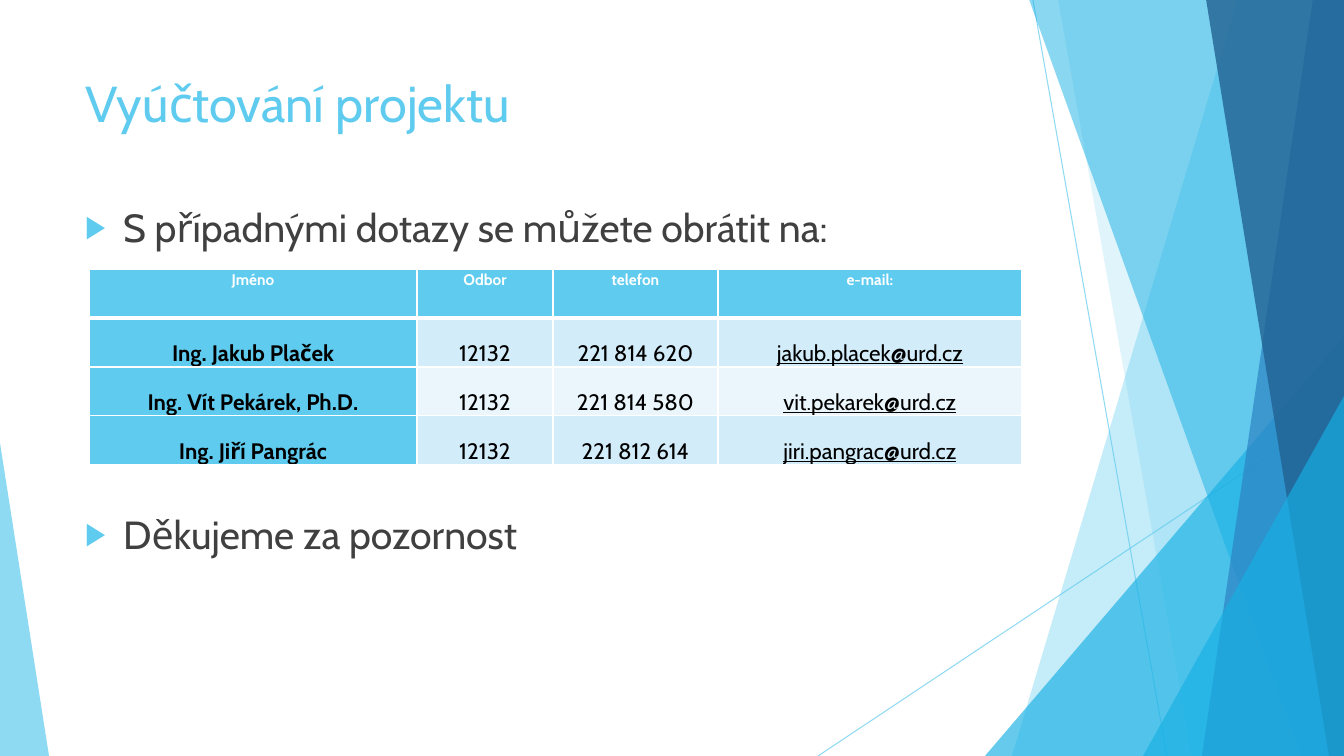
from lxml import etree
from pptx import Presentation
from pptx.dml.color import RGBColor
from pptx.enum.shapes import MSO_CONNECTOR, MSO_SHAPE
from pptx.enum.text import MSO_ANCHOR, MSO_AUTO_SIZE, PP_ALIGN
from pptx.oxml.ns import qn
from pptx.util import Pt

STRAIGHT, TRIANGLE = MSO_CONNECTOR.STRAIGHT, MSO_SHAPE.ISOSCELES_TRIANGLE
TOP, BOTTOM = MSO_ANCHOR.TOP, MSO_ANCHOR.BOTTOM
LEFT, CENTER = PP_ALIGN.LEFT, PP_ALIGN.CENTER
NO_AUTOFIT = MSO_AUTO_SIZE.NONE

WIDTH, HEIGHT = 1344, 756
EMU_PER_PX = 12192000 / WIDTH
SKY, CYAN, BLUE, NAVY = "5FCBEF", "17B0E4", "2E83C3", "226292"
WHITE, BLACK, GRAY = "FFFFFF", "000000", "404040"
BANDS = ["D2ECF9", "EAF6FC"]


def px(length):
    return round(length * EMU_PER_PX)


def color(hex_value):
    return RGBColor.from_string(hex_value)


def apply(target, values):
    for name, value in values.items():
        setattr(target, name, value)


def add_xml(parent, tag, **attributes):
    return etree.SubElement(parent, qn(tag), attributes)


def set_alpha(owner, percent):
    for rgb in owner.iter(qn("a:srgbClr")):
        add_xml(rgb, "a:alpha", val=str(percent * 1000))


class Deck:
    font_name = "Cabin"

    def __init__(self):
        self.presentation = Presentation()
        apply(self.presentation, {"slide_width": px(WIDTH), "slide_height": px(HEIGHT)})
        layout = self.presentation.slide_layouts[1]
        self.slide = self.presentation.slides.add_slide(layout)
        self.shapes = self.slide.shapes

    def ray(self, x1, y1, x2, y2):
        line = self.shapes.add_connector(STRAIGHT, px(x1), px(y1), px(x2), px(y2))
        line.line.width = Pt(0.75)
        line.line.color.rgb = color(SKY)
        properties = line.element.spPr
        set_alpha(properties, 70)
        add_xml(properties, "a:effectLst")

    def paint(self, facet, fill, alpha):
        facet.shadow.inherit = False
        facet.fill.solid()
        facet.fill.fore_color.rgb = color(fill)
        facet.line.fill.background()
        set_alpha(facet.element.spPr, alpha)

    def strip(self, top_x, bottom_x, fill, alpha):
        """Facet that reaches from a slanted left edge to the slide's right edge."""
        outline = self.shapes.build_freeform(top_x, -1, scale=EMU_PER_PX)
        outline.add_line_segments([(WIDTH, -1), (WIDTH, HEIGHT), (bottom_x, HEIGHT)])
        self.paint(outline.convert_to_shape(), fill, alpha)

    def corner(self, left, top, width, peak, fill, alpha):
        """Triangle that stands on the slide's bottom edge."""
        facet = self.shapes.add_shape(
            TRIANGLE, px(left), px(top), px(width), px(HEIGHT - top))
        facet.adjustments[0] = peak
        self.paint(facet, fill, alpha)

    def add_text(self, paragraph, text, size, fill, align=CENTER, **font):
        paragraph.alignment = align
        run = paragraph.add_run()
        run.text = text
        run.font.color.rgb = color(fill)
        apply(run.font, {"name": self.font_name, "size": Pt(size), **font})

    def place(self, placeholder, left, top, width, height):
        apply(placeholder, {"left": px(left), "top": px(top),
                            "width": px(width), "height": px(height)})
        frame = placeholder.text_frame
        apply(frame, {"vertical_anchor": TOP, "word_wrap": True, "auto_size": NO_AUTOFIT})
        # Bring the text in front of the facets
        placeholder.element.getparent().append(placeholder.element)
        return frame

    def title(self, text, *box):
        frame = self.place(self.shapes.title, *box)
        self.add_text(frame.paragraphs[0], text, 36, SKY, LEFT)

    def bullets(self, items, *box):
        frame = self.place(self.slide.placeholders[1], *box)
        for index, (text, space_before) in enumerate(items):
            paragraph = frame.add_paragraph() if index else frame.paragraphs[0]
            paragraph.space_before = Pt(space_before)
            self.add_text(paragraph, text, 28, GRAY, LEFT)
            properties = paragraph._p.get_or_add_pPr()
            properties.set("marL", str(px(38)))
            properties.set("indent", str(px(-38)))
            add_xml(add_xml(properties, "a:buClr"), "a:srgbClr", val=SKY)
            add_xml(properties, "a:buSzPct", val="80000")
            add_xml(properties, "a:buChar", char="▶")

    def cell(self, cell, text, fill, anchor, borders, text_style):
        apply(cell, {"margin_left": px(7), "margin_right": px(7), "margin_top": 0,
                     "margin_bottom": 0, "vertical_anchor": anchor})
        properties = cell._tc.get_or_add_tcPr()
        for side, width in borders.items():
            line = add_xml(properties, "a:ln" + side, w=str(Pt(width)))
            add_xml(add_xml(line, "a:solidFill"), "a:srgbClr", val=WHITE)
        cell.fill.solid()
        cell.fill.fore_color.rgb = color(fill)
        paragraph = cell.text_frame.paragraphs[0]
        paragraph.line_spacing = 1.07
        self.add_text(paragraph, text, **text_style)

    def contacts(self, rows, left, top, widths, row_height):
        table = self.shapes.add_table(
            len(rows), len(widths), px(left), px(top),
            px(sum(widths)), px(row_height * len(rows))).table
        apply(table, {"first_row": False, "horz_banding": False})
        for column, width in zip(table.columns, widths):
            column.width = px(width)
        for r, row in enumerate(rows):
            table.rows[r].height = px(row_height)
            header = r == 0
            borders = {"L": 1, "R": 1, "T": 3 if r == 1 else 1, "B": 3 if header else 1}
            for c, text in enumerate(row):
                text_style = {"size": 11 if header else 16,
                              "fill": WHITE if header else BLACK,
                              "bold": header or c == 0, "underline": "@" in text}
                self.cell(
                    table.cell(r, c), text,
                    SKY if header or c == 0 else BANDS[(r - 1) % 2],
                    TOP if header else BOTTOM, borders, text_style)


def main():
    deck = Deck()

    # Facets of the background, back to front
    deck.ray(1033, 0, 1167, HEIGHT)
    deck.ray(WIDTH, 406, 818, HEIGHT)
    deck.strip(1238, 1012, SKY, 36)
    deck.strip(1058, 1192, SKY, 20)
    deck.corner(985, 336, 359, 1, CYAN, 66)
    deck.strip(1029, 1301, CYAN, 50)
    deck.strip(1313, 1202, BLUE, 70)
    deck.strip(1206, 1329, NAVY, 80)
    deck.corner(1143, 396, 201, 1, CYAN, 66)
    deck.corner(0, 443, 49, 0, SKY, 70)

    # Title and list, with room for the table between the two items
    deck.title("Vyúčtování projektu", 75, 67, 947, 145)
    deck.bullets([("S případnými dotazy se můžete obrátit na:", 10),
                  ("Děkujeme za pozornost", 186)], 75, 198, 947, 468)

    # Contact table
    deck.contacts([
        ("Jméno", "Odbor", "telefon", "e-mail:"),
        ("Ing. Jakub Plaček", "12132", "221 814 620", "jakub.placek@urd.cz"),
        ("Ing. Vít Pekárek, Ph.D.", "12132", "221 814 580", "vit.pekarek@urd.cz"),
        ("Ing. Jiří Pangrác", "12132", "221 812 614", "jiri.pangrac@urd.cz"),
    ], 89, 269, [328, 136, 165, 304], 49)

    deck.presentation.save("out.pptx")


if __name__ == "__main__":
    main()
